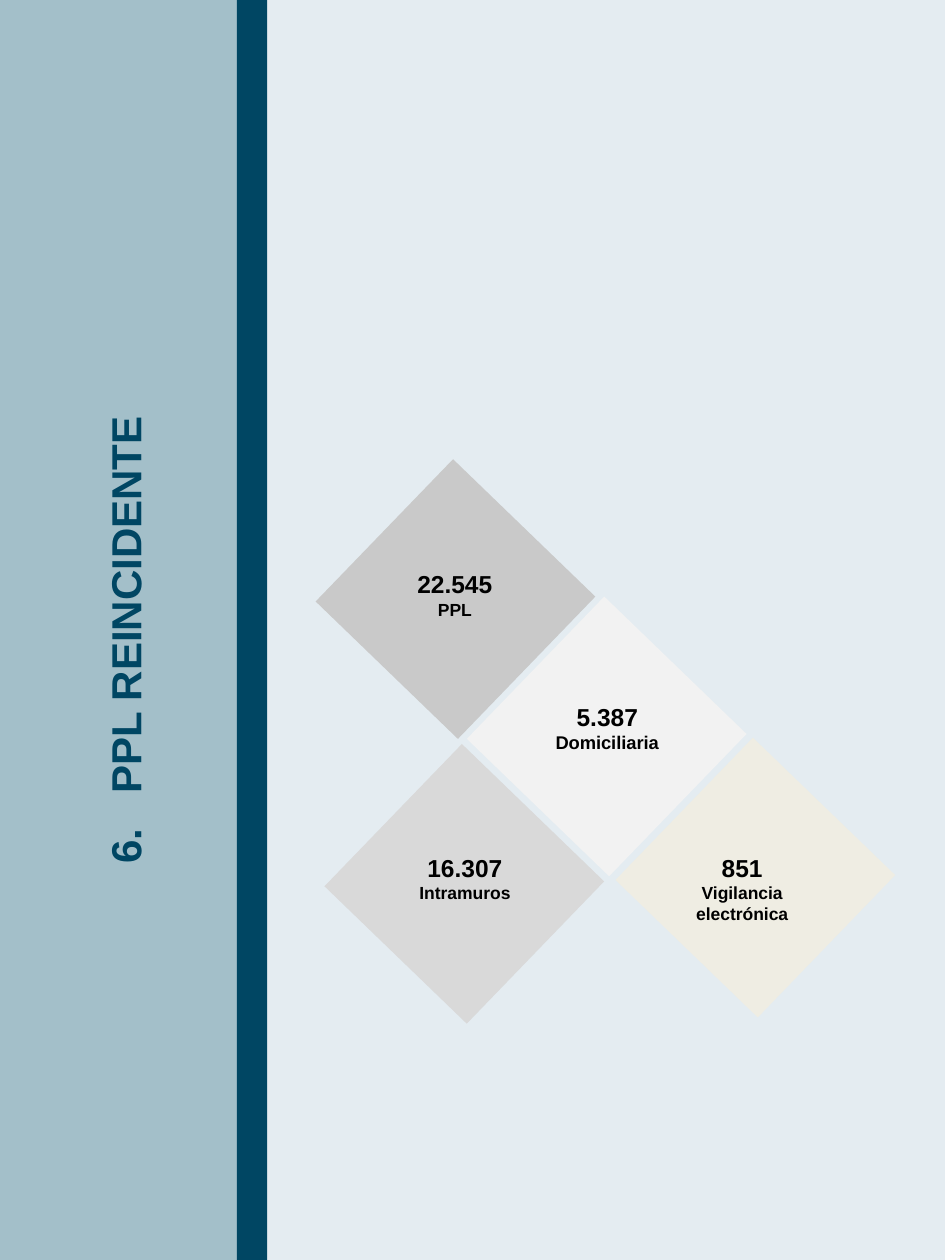
from pptx import Presentation
from pptx.dml.color import RGBColor
from pptx.enum.shapes import MSO_SHAPE
from pptx.enum.text import PP_ALIGN
from pptx.util import Inches, Pt

# The slide is a grid of 75 columns by 100 rows
COLUMNS, ROWS = 75, 100
CELL = Inches(0.1)
FONT = "Arial"
NAVY, BLACK = "004663", "000000"
DIAMOND_SIDE, DIAMOND_ANGLE = 15.7, 44
LABEL_WIDTH = 13.8

# Diamond column, row and fill; label column, row and height; figure, caption, caption size
CATEGORIES = [
    (40.3, 50.6, "F2F2F2", 41.3, 55.2, 5.9, "5.387", "Domiciliaria", 10.5),
    (52.1, 61.8, "EFEDE3", 52, 67.2, 7.4, "851", "Vigilancia electrónica", 10),
    (29, 62.3, "D9D9D9", 30, 67.2, 5.9, "16.307", "Intramuros", 10),
    (28.3, 39.7, "C9C9C9", 29.2, 44.7, 5.9, "22.545", "PPL", 10),
]


def cells(count):
    return round(count * CELL)


def color(hex_string):
    return RGBColor.from_string(hex_string)


def add_rectangle(slide, column, row, width, height, fill, rotation=0):
    shape = slide.shapes.add_shape(
        MSO_SHAPE.RECTANGLE, cells(column), cells(row), cells(width), cells(height))
    shape.rotation = rotation
    shape.shadow.inherit = False
    shape.fill.solid()
    shape.fill.fore_color.rgb = color(fill)
    shape.line.fill.background()


def add_text_frame(slide, column, row, width, height):
    text_box = slide.shapes.add_textbox(
        cells(column), cells(row), cells(width), cells(height))
    text_box.text_frame.word_wrap = True
    return text_box.text_frame


def format_paragraph(paragraph, size, font_color):
    paragraph.alignment = PP_ALIGN.CENTER
    for run in paragraph.runs:
        run.font.name = FONT
        run.font.size = Pt(size)
        run.font.bold = True
        run.font.color.rgb = color(font_color)


def add_vertical_title(slide, number, title):
    text_frame = add_text_frame(slide, 7.4, 7.5, 6.1, 86.6)
    text_frame._txBody.bodyPr.set("vert", "vert270")
    paragraph = text_frame.paragraphs[0]
    for text in (number, " ", title):
        paragraph.add_run().text = text
    format_paragraph(paragraph, 24, NAVY)
    # Widen the single space between number and title
    paragraph.runs[1].font._element.set("spc", "1330")


def add_label(slide, column, row, height, figure, caption, caption_size):
    text_frame = add_text_frame(slide, column, row, LABEL_WIDTH, height)
    text_frame.text = f"{figure}\n{caption}"
    for paragraph, size in zip(text_frame.paragraphs, (14, caption_size)):
        format_paragraph(paragraph, size, BLACK)


def main():
    presentation = Presentation()
    presentation.slide_width = cells(COLUMNS)
    presentation.slide_height = cells(ROWS)
    slide = presentation.slides.add_slide(presentation.slide_layouts[6])
    slide.background.fill.solid()
    slide.background.fill.fore_color.rgb = color("E4ECF1")

    # Side band with the section title
    add_rectangle(slide, 0, 0, 18.8, ROWS, "A3BFC9")
    add_rectangle(slide, 18.8, 0, 2.4, ROWS, NAVY)
    add_vertical_title(slide, "6.", "PPL REINCIDENTE")

    # Diamonds, then their labels on top
    for column, row, fill, *_ in CATEGORIES:
        add_rectangle(slide, column, row, DIAMOND_SIDE, DIAMOND_SIDE, fill, DIAMOND_ANGLE)
    for _, _, _, *label in CATEGORIES:
        add_label(slide, *label)

    presentation.save("out.pptx")


if __name__ == "__main__":
    main()
